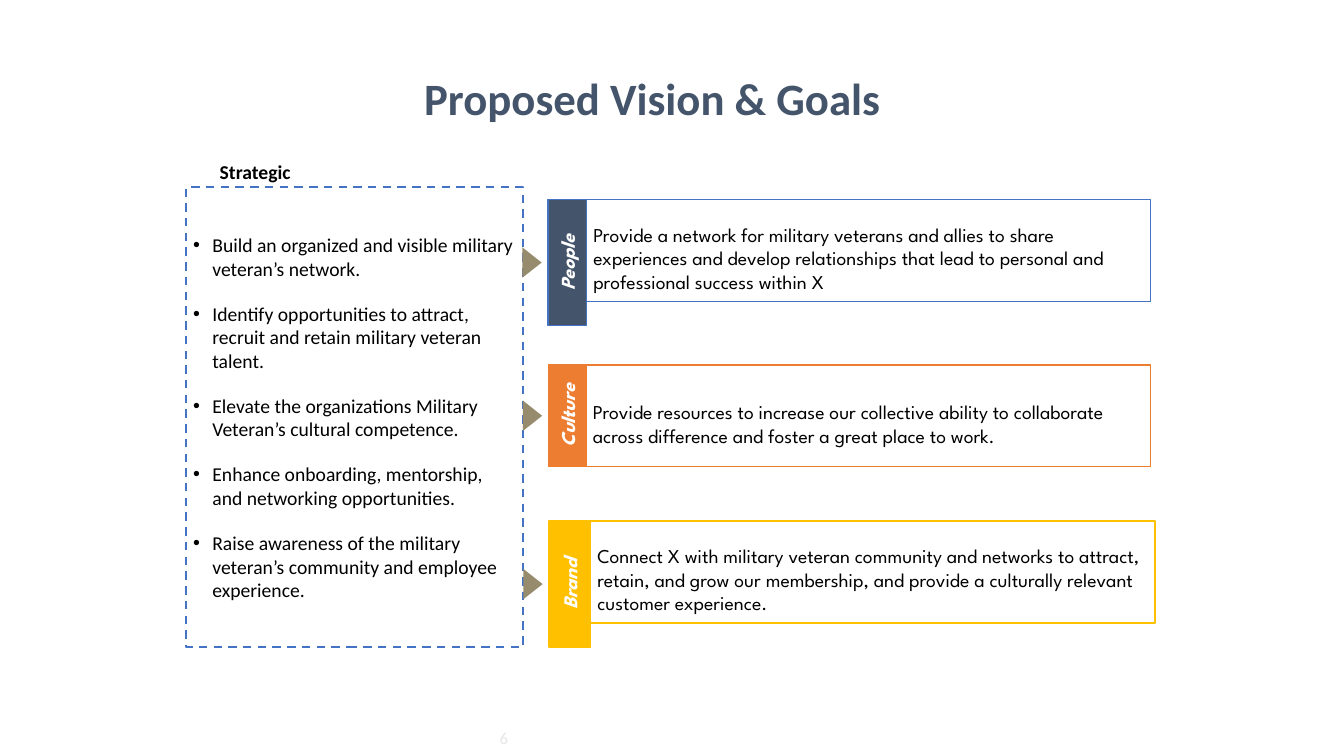
from pptx import Presentation
from pptx.dml.color import RGBColor
from pptx.enum.dml import MSO_LINE
from pptx.enum.shapes import MSO_SHAPE
from pptx.enum.text import MSO_ANCHOR, PP_ALIGN
from pptx.oxml.ns import qn
from pptx.util import Inches, Pt

WIDTH, HEIGHT = 13.33, 7.5
COL, ROW = Inches(WIDTH) / 100, Inches(HEIGHT) / 100
CARD_W, CARD_H = 42.01, 13.47
STRATEGIES = [
    "Build an organized and visible military veteran’s network.",
    "Identify opportunities to attract, recruit and retain military veteran talent.",
    "Elevate the organizations Military Veteran’s cultural competence.",
    "Enhance onboarding, mentorship, and networking opportunities.",
    "Raise awareness of the military veteran’s community and employee experience.",
]
GOALS = [
    ((40.77, 26.4, 2.85, 16.67), "People", "44546A", "4472C4", MSO_ANCHOR.TOP,
     "Provide a network for military veterans and allies to share experiences and "
     "develop relationships that lead to personal and professional success within X"),
    ((40.81, 48.27, 2.78, 13.47), "Culture", "ED7D31", "ED7D31", MSO_ANCHOR.MIDDLE,
     "Provide resources to increase our collective ability to collaborate across "
     "difference and foster a great place to work."),
    ((40.84, 68.93, 3.08, 16.67), "Brand", "FFC000", "FFC000", MSO_ANCHOR.TOP,
     "Connect X with military veteran community and networks to attract, retain, and "
     "grow our membership, and provide a culturally relevant customer experience."),
]


def rgb(value):
    """Turn a hex string into a colour."""
    return RGBColor.from_string(value)


def place(box):
    """Turn a box in grid columns and rows into slide lengths."""
    x, y, w, h = box
    return [round(v) for v in (x * COL, y * ROW, w * COL, h * ROW)]


def add_box(s, kind, box, fill, line=None, width=1, dash=None, turn=0):
    """Add a shape that covers the box after a quarter turn, if any."""
    x, y, w, h = place(box)
    if turn:
        x, y, w, h = x + (w - h) // 2, y + (h - w) // 2, h, w
    sp = s.shapes.add_shape(kind, x, y, w, h)
    sp.rotation = turn
    sp.shadow.inherit = False
    sp.fill.solid()
    sp.fill.fore_color.rgb = rgb(fill)
    if line:
        sp.line.color.rgb = rgb(line)
        sp.line.width = Pt(width)
        sp.line.dash_style = dash
    else:
        sp.line.fill.background()
    return sp


def add_bullet(p):
    """Give a paragraph a round bullet with a hanging indent."""
    pPr = p._p.get_or_add_pPr()
    pPr.set("marL", str(Inches(0.19)))
    pPr.set("indent", str(-Inches(0.19)))
    pPr.append(pPr.makeelement(qn("a:buFont"), {"typeface": "Arial"}))
    pPr.append(pPr.makeelement(qn("a:buChar"), {"char": "•"}))


def write(sp, texts, font="Calibri", size=14, color="000000", bold=False, italic=False,
          align=PP_ALIGN.LEFT, anchor=MSO_ANCHOR.MIDDLE, margins=(0.07, 0.04, 0.07, 0.04),
          gap=0, spacing=None, bullets=False):
    """Write one paragraph per text into a shape."""
    tf = sp.text_frame
    tf.word_wrap = True
    tf.vertical_anchor = anchor
    tf.margin_left, tf.margin_top, tf.margin_right, tf.margin_bottom = map(Inches, margins)
    for i, text in enumerate(texts):
        p = tf.add_paragraph() if i else tf.paragraphs[0]
        p.alignment = align
        p.line_spacing = spacing
        p.space_after = Pt(gap if i < len(texts) - 1 else 0)
        if bullets:
            add_bullet(p)
        r = p.add_run()
        r.text = text
        r.font.name, r.font.size = font, Pt(size)
        r.font.bold, r.font.italic = bold, italic
        r.font.color.rgb = rgb(color)


def add_label(s, box, text, **style):
    """Add a text box with one paragraph."""
    write(s.shapes.add_textbox(*place(box)), [text], **style)


def add_strategy(s, box):
    """Draw the dashed panel of strategies and its heading."""
    x, y, w, h = box
    add_label(s, (x + 2.5, y - 3.6, 8.63, 3.2), "Strategic", bold=True,
              anchor=MSO_ANCHOR.TOP, margins=(0, 0, 0, 0))
    panel = add_box(s, MSO_SHAPE.RECTANGLE, box, "FFFFFF", "4472C4", 1.5, MSO_LINE.DASH)
    write(panel, STRATEGIES, gap=15.4, bullets=True)


def add_goal(s, box, name, fill, line, anchor, text):
    """Draw an arrow, a turned tab in the box and the card on its right."""
    x, y, w, h = box
    add_box(s, MSO_SHAPE.ISOSCELES_TRIANGLE, (x - 1.9, y + h / 2 - 2, 1.43, 4),
            "968C6D", turn=90)
    card = add_box(s, MSO_SHAPE.RECTANGLE, (x + w, y, CARD_W, CARD_H), "FFFFFF", line)
    write(card, [text], font="League Spartan", anchor=anchor, margins=(0.07, 0.23, 0.07, 0.07))
    tab = add_box(s, MSO_SHAPE.RECTANGLE, box, fill, line, turn=270)
    write(tab, [name], font="League Spartan", color="FFFFFF", bold=True, italic=True,
          align=PP_ALIGN.CENTER)


def main():
    """Build the slide and save it."""
    prs = Presentation()
    prs.slide_width, prs.slide_height = Inches(WIDTH), Inches(HEIGHT)
    s = prs.slides.add_slide(prs.slide_layouts[6])
    add_strategy(s, (13.85, 24.8, 25.06, 60.8))
    for goal in GOALS:
        add_goal(s, *goal)
    add_label(s, (15, 8.27, 67.07, 8.8), "Proposed Vision & Goals", size=32, color="44546A",
              bold=True, align=PP_ALIGN.CENTER, anchor=MSO_ANCHOR.BOTTOM, spacing=0.9)
    add_label(s, (35.5, 95.8, 4, 3.6), "6", size=12, color="E7E6E6",
              align=PP_ALIGN.CENTER, margins=(0, 0, 0, 0))
    prs.save("out.pptx")


if __name__ == "__main__":
    main()
